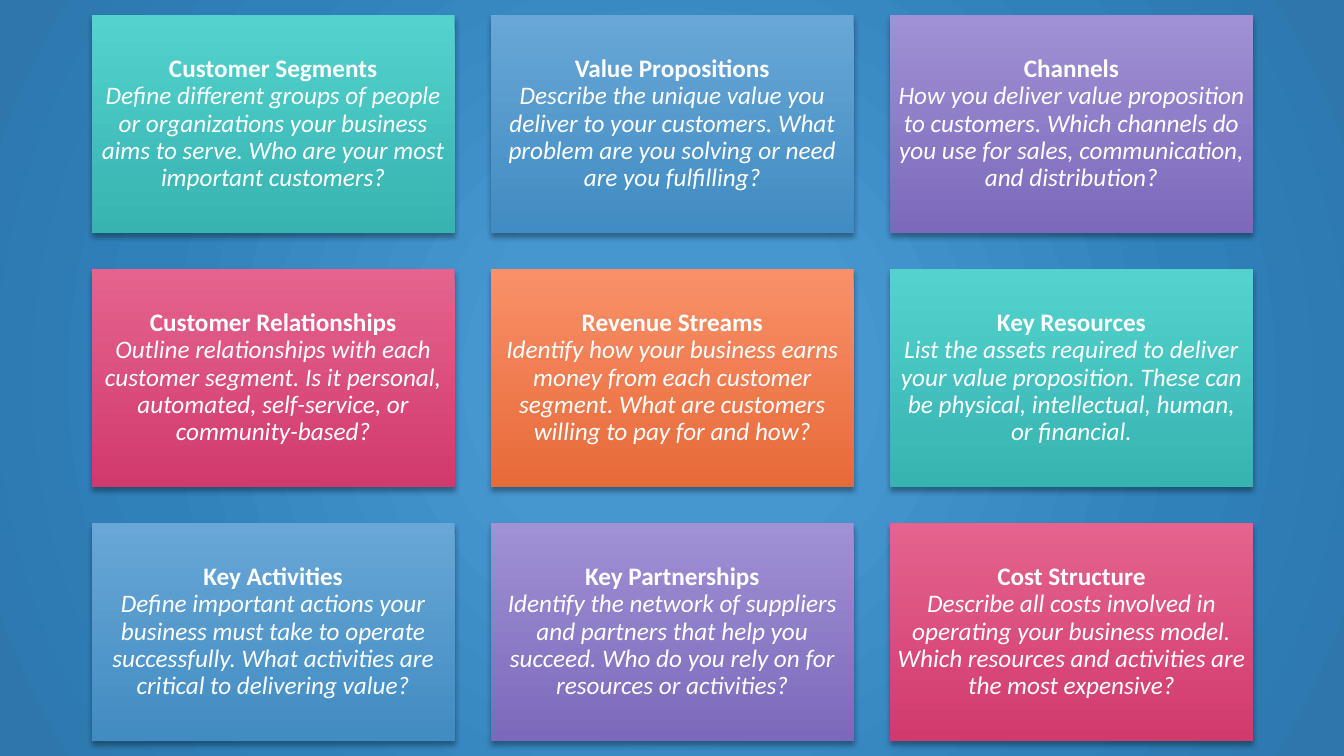
"""Build a slide showing the nine blocks of a business model canvas."""
from dataclasses import dataclass

from lxml import etree
from pptx import Presentation
from pptx import util as u
from pptx.dml.color import RGBColor
from pptx.enum import shapes, text
from pptx.oxml import ns, parse_xml
from pptx.slide import Slide

EMU_PER_PX = 3048
SLIDE_WIDTH, SLIDE_HEIGHT = 4000, 2250
GRID_LEFT, GRID_TOP = 273, 45
BLOCK_WIDTH, BLOCK_HEIGHT, GAP = 1080, 648, 108
INSET = 21
COLUMNS = 3

COLOURS = {
    "glow": "4696CF",
    "mid": "3080B9",
    "edge": "2D77AD",
    "shadow": "000000",
    "text": "FFFFFF",
    "teal_top": "53D2CE",
    "teal_bottom": "37B3B0",
    "blue_top": "68A7D7",
    "blue_bottom": "418CC2",
    "purple_top": "A090D4",
    "purple_bottom": "7D69BB",
    "pink_top": "E5638E",
    "pink_bottom": "D13A6D",
    "orange_top": "F99068",
    "orange_bottom": "E76A39",
}
BACKDROP_STOPS = ((0, "glow"), (23, "glow"), (69, "mid"), (97, "edge"))


def px(length: int) -> u.Emu:
    """Convert pixels to EMU."""
    return u.Emu(length * EMU_PER_PX)


FRAME_FORMAT = {
    "word_wrap": True,
    "vertical_anchor": text.MSO_ANCHOR.MIDDLE,
    "margin_left": px(INSET),
    "margin_right": px(INSET),
    "margin_top": px(INSET),
    "margin_bottom": px(INSET),
}
PARAGRAPH_FORMAT = {"alignment": text.PP_ALIGN.CENTER, "line_spacing": 0.9}
FONT_FORMAT = {"name": "Calibri", "size": u.Pt(18)}
TITLE_FORMAT = FONT_FORMAT | {"bold": True}
PROMPT_FORMAT = FONT_FORMAT | {"italic": True}


@dataclass(frozen=True)
class Block:
    """One building block of the business model."""
    title: str
    prompt: str
    hue: str


BLOCKS = (
    Block("Customer Segments",
          "Define different groups of people or organizations your business aims "
          "to serve. Who are your most important customers?", "teal"),
    Block("Value Propositions",
          "Describe the unique value you deliver to your customers. What problem "
          "are you solving or need are you fulfilling?", "blue"),
    Block("Channels",
          "How you deliver value proposition to customers. Which channels do you "
          "use for sales, communication, and distribution?", "purple"),
    Block("Customer Relationships",
          "Outline relationships with each customer segment. Is it personal, "
          "automated, self-service, or community-based?", "pink"),
    Block("Revenue Streams",
          "Identify how your business earns money from each customer segment. "
          "What are customers willing to pay for and how?", "orange"),
    Block("Key Resources",
          "List the assets required to deliver your value proposition. These can "
          "be physical, intellectual, human, or financial.", "teal"),
    Block("Key Activities",
          "Define important actions your business must take to operate "
          "successfully. What activities are critical to delivering value?", "blue"),
    Block("Key Partnerships",
          "Identify the network of suppliers and partners that help you succeed. "
          "Who do you rely on for resources or activities?", "purple"),
    Block("Cost Structure",
          "Describe all costs involved in operating your business model. Which "
          "resources and activities are the most expensive?", "pink"),
)


def apply_format(target: object, values: dict[str, object]) -> None:
    """Set each named attribute on the target."""
    for name, value in values.items():
        setattr(target, name, value)


def paint_backdrop(slide: Slide) -> None:
    """Give the slide a radial gradient background."""
    stops = "".join(
        f'<a:gs pos="{percent * 1000}"><a:srgbClr val="{COLOURS[colour]}"/></a:gs>'
        for percent, colour in BACKDROP_STOPS)
    backdrop = parse_xml(
        f'<p:bg {ns.nsdecls("p", "a")}><p:bgPr><a:gradFill rotWithShape="1">'
        f'<a:gsLst>{stops}</a:gsLst><a:path path="circle">'
        '<a:fillToRect l="50000" t="50000" r="50000" b="50000"/></a:path>'
        '</a:gradFill><a:effectLst/></p:bgPr></p:bg>')
    slide._element.cSld.insert(0, backdrop)


def cast_shadow(card) -> None:
    """Add a soft shadow below the card."""
    card.shadow.inherit = False
    effects = card._element.spPr.find(ns.qn("a:effectLst"))
    shadow = etree.SubElement(
        effects, ns.qn("a:outerShdw"), blurRad=str(u.Pt(4)), dist=str(u.Pt(3)),
        dir="5400000", algn="ctr", rotWithShape="0")
    colour = etree.SubElement(shadow, ns.qn("a:srgbClr"), val=COLOURS["shadow"])
    etree.SubElement(colour, ns.qn("a:alpha"), val="35000")


def write_block(card, block: Block) -> None:
    """Write the title and prompt on the card."""
    apply_format(card.text_frame, FRAME_FORMAT)
    paragraph = card.text_frame.paragraphs[0]
    apply_format(paragraph, PARAGRAPH_FORMAT)
    space_after = etree.SubElement(
        paragraph._p.get_or_add_pPr(), ns.qn("a:spcAft"))
    etree.SubElement(space_after, ns.qn("a:spcPct"), val="35000")
    for wording, values in ((block.title, TITLE_FORMAT),
                            (block.prompt, PROMPT_FORMAT)):
        if paragraph.runs:
            paragraph.add_line_break()
        run = paragraph.add_run()
        run.text = wording
        apply_format(run.font, values)
        run.font.color.rgb = RGBColor.from_string(COLOURS["text"])


def draw_block(slide: Slide, block: Block, position: int) -> None:
    """Draw one block at its place in the grid."""
    row, column = divmod(position, COLUMNS)
    card = slide.shapes.add_shape(
        shapes.MSO_SHAPE.RECTANGLE,
        px(GRID_LEFT + column * (BLOCK_WIDTH + GAP)),
        px(GRID_TOP + row * (BLOCK_HEIGHT + GAP)),
        px(BLOCK_WIDTH), px(BLOCK_HEIGHT))
    card.fill.gradient()
    card.fill.gradient_angle = 270
    for stop, position_on_fill, end in zip(
            card.fill.gradient_stops, (0, 1), ("top", "bottom")):
        stop.position = position_on_fill
        stop.color.rgb = RGBColor.from_string(COLOURS[f"{block.hue}_{end}"])
    card.line.fill.background()
    cast_shadow(card)
    write_block(card, block)


def main() -> None:
    """Build and save the presentation."""
    deck = Presentation()
    apply_format(deck, {"slide_width": px(SLIDE_WIDTH),
                        "slide_height": px(SLIDE_HEIGHT)})
    canvas = deck.slides.add_slide(deck.slide_layouts[6])
    paint_backdrop(canvas)
    for position, block in enumerate(BLOCKS):
        draw_block(canvas, block, position)
    deck.save("out.pptx")


if __name__ == "__main__":
    main()
